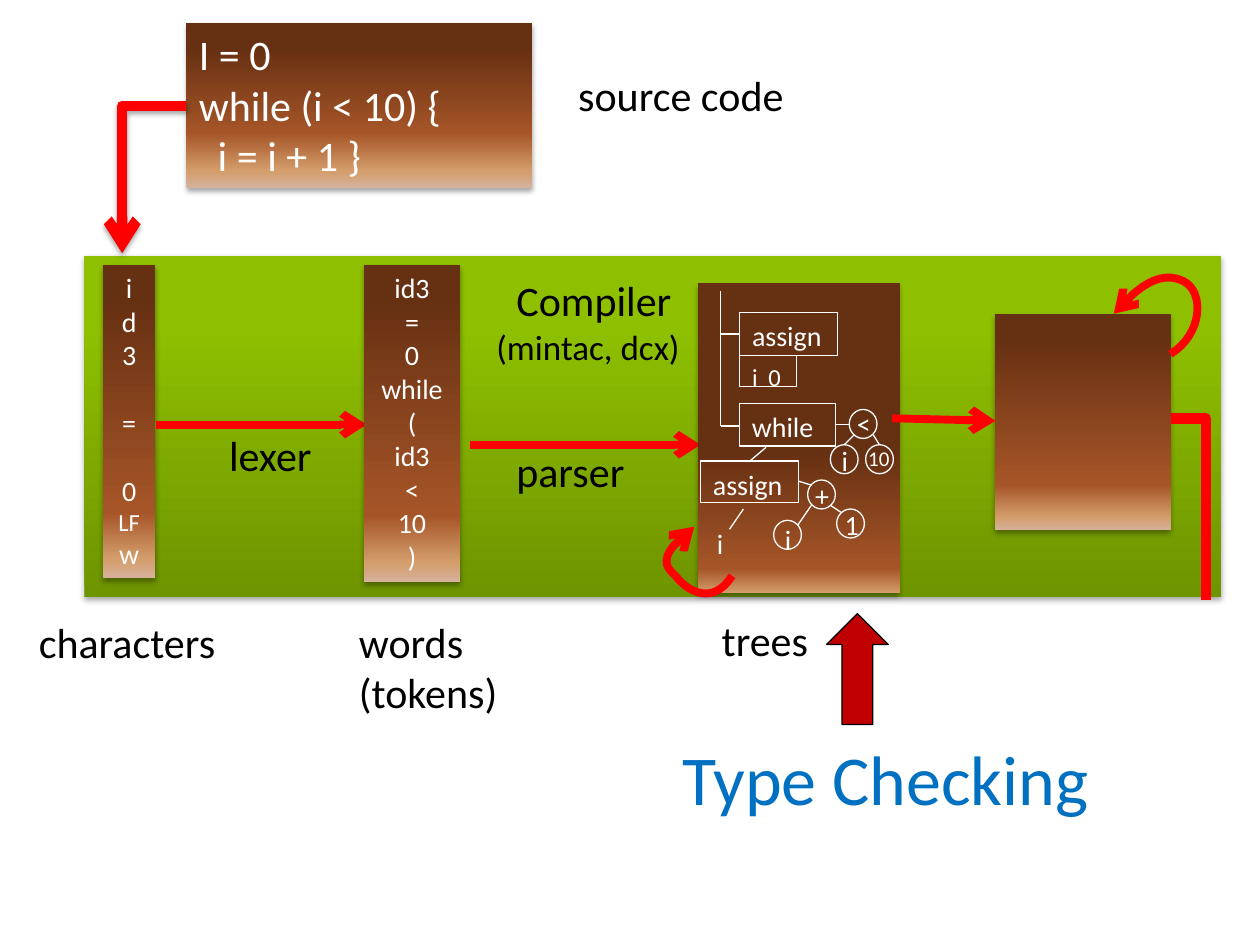
from lxml import etree
from pptx import Presentation
from pptx.dml.color import RGBColor
from pptx.enum.shapes import MSO_CONNECTOR as LINE, MSO_SHAPE as SHAPE
from pptx.enum.text import MSO_ANCHOR as ANCHOR, MSO_AUTO_SIZE as AUTO, PP_ALIGN as ALIGN
from pptx.oxml.ns import qn
from pptx.util import Pt

PX = 9144  # 100 px to the inch
BLACK = RGBColor(0x00, 0x00, 0x00)
WHITE = RGBColor(0xFF, 0xFF, 0xFF)
RED = RGBColor(0xFF, 0x00, 0x00)
DARK_RED = RGBColor(0xC0, 0x00, 0x00)
BLUE = RGBColor(0x00, 0x70, 0xC0)
GREENS = [RGBColor(0x6E, 0x94, 0x00), RGBColor(0x8F, 0xC0, 0x00), RGBColor(0x90, 0xC1, 0x00)]
BROWNS = [RGBColor(0xD6, 0xB1, 0x9C), RGBColor(0xD4, 0x9E, 0x6C),
          RGBColor(0xA6, 0x55, 0x28), RGBColor(0x66, 0x30, 0x12)]
GREEN_STOPS = list(zip([0, 80, 100], GREENS))
SOURCE_STOPS = list(zip([0, 10, 33, 85], BROWNS))
STAGE_STOPS = list(zip([0, 6, 21, 89], BROWNS))
TREE_STOPS = list(zip([0, 0, 8, 46], BROWNS))


def emu(*lengths):
    return [round(length * PX) for length in lengths]


def sub(parent, tag, **attributes):
    return etree.SubElement(parent, qn(tag), {k: str(v) for k, v in attributes.items()})


def add_shadow(shape):
    effects = sub(shape._element.spPr, "a:effectLst")
    shadow = sub(effects, "a:outerShdw", blurRad=Pt(3.1), dist=Pt(1.8),
                 dir=5400000, rotWithShape=0)
    sub(sub(shadow, "a:srgbClr", val=BLACK), "a:alpha", val=35000)


def style_line(line, color, width, arrow=False):
    line.color.rgb = color
    line.width = Pt(width)
    if arrow:
        sub(line._get_or_add_ln(), "a:tailEnd", type="arrow")


def write(shape, lines, size, color=BLACK, align=ALIGN.LEFT, wrap=True, grow=True):
    """Each line is a string, or a (string, options) pair."""
    frame = shape.text_frame
    for name, value in {"word_wrap": wrap, "vertical_anchor": ANCHOR.TOP,
                        "auto_size": AUTO.SHAPE_TO_FIT_TEXT if grow else AUTO.NONE}.items():
        setattr(frame, name, value)
    for index, line in enumerate(lines):
        text, options = (line, {}) if isinstance(line, str) else line
        paragraph = frame.paragraphs[0] if index == 0 else frame.add_paragraph()
        paragraph.alignment = align
        paragraph.space_before = Pt(options.get("before", 0))
        properties = paragraph._p.get_or_add_pPr()
        if "indent" in options:
            properties.set("marL", str(options["indent"] * PX))
        if "tab" in options:
            sub(sub(properties, "a:tabLst"), "a:tab", pos=options["tab"] * PX, algn="l")
        run = paragraph.add_run()
        run.text = text
        font = {"name": "Calibri", "size": Pt(options.get("size", size))}
        for name, value in font.items():
            setattr(run.font, name, value)
        run.font.color.rgb = color


def add_panel(slide, box, stops):
    """Rectangle with an upward gradient and a soft shadow."""
    panel = slide.shapes.add_shape(SHAPE.RECTANGLE, *emu(*box))
    panel.fill.gradient()
    panel.fill.gradient_angle = 90
    stop_list = panel._element.spPr.find(qn("a:gradFill")).find(qn("a:gsLst"))
    stop_list.clear()
    for position, color in stops:
        sub(sub(stop_list, "a:gs", pos=position * 1000), "a:srgbClr", val=color)
    panel.line.fill.background()
    add_shadow(panel)
    return panel


def add_outline(slide, kind, box):
    shape = slide.shapes.add_shape(kind, *emu(*box))
    shape.shadow.inherit = False
    shape.fill.background()
    style_line(shape.line, WHITE, 0.75)
    return shape


def add_label(slide, box, lines, size=24, color=BLACK, align=ALIGN.LEFT):
    label = slide.shapes.add_textbox(*emu(*box))
    write(label, lines, size, color, align, wrap=False)


def add_node(slide, left, top, text, label_box, size=16):
    add_outline(slide, SHAPE.OVAL, (left, top, 22, 23))
    add_label(slide, label_box, [text], size, WHITE, ALIGN.CENTER)


def add_line(slide, ends, color=WHITE, width=0.75, arrow=False):
    line = slide.shapes.add_connector(LINE.STRAIGHT, *emu(*ends))
    style_line(line.line, color, width, arrow)
    sub(line._element.spPr, "a:effectLst")


def add_elbow(slide, ends, arrow=False, rotation=0, shadow=False):
    elbow = slide.shapes.add_connector(LINE.ELBOW, *emu(*ends))
    properties = elbow._element.spPr
    properties.find(qn("a:prstGeom")).set("prst", "bentConnector2")
    if rotation:
        properties.find(qn("a:xfrm")).set("rot", str(rotation * 60000))
    style_line(elbow.line, RED, 6, arrow)
    if shadow:
        add_shadow(elbow)
    else:
        sub(properties, "a:effectLst")


def bezier(p0, p1, p2, p3, steps=16):
    for t in (step / steps for step in range(1, steps + 1)):
        u = 1 - t
        yield tuple(emu(*(u**3 * a + 3 * u * u * t * b + 3 * u * t * t * c + t**3 * d
                          for a, b, c, d in zip(p0, p1, p2, p3))))


def add_loop(slide, points):
    """Curved arrow through cubic segments that share their end points."""
    builder = slide.shapes.build_freeform(*emu(*points[0]))
    for start in range(0, len(points) - 1, 3):
        builder.add_line_segments(list(bezier(*points[start:start + 4])), close=False)
    loop = builder.convert_to_shape()
    loop.shadow.inherit = False
    loop.fill.background()
    style_line(loop.line, RED, 4.5, arrow=True)


def add_tree(slide):
    add_panel(slide, (554, 225, 160, 246), TREE_STOPS)
    for box, line, size in [((587, 248, 78, 34), "assign", 16),
                            ((587, 320, 76, 34), "while", 16),
                            ((587, 282, 45, 25), ("i\t0", {"tab": 13}), 14),
                            ((556, 366, 78, 33), "assign", 16)]:
        write(add_outline(slide, SHAPE.RECTANGLE, box), [line], size, WHITE, grow=False)
    # Branches
    for ends in [(572, 231, 572, 338), (587, 265, 572, 265), (587, 338, 572, 338),
                 (644, 401, 633, 417), (659, 401, 668, 407), (595, 366, 608, 355),
                 (634, 382, 644, 385), (678, 345, 670, 353), (693, 345, 698, 353),
                 (674, 337, 663, 337), (590, 404, 579, 420)]:
        add_line(slide, ends)
    # Operators and operands
    add_node(slide, 641, 381, "+", (637, 375, 31, 37))
    add_node(slide, 614, 413, "i", (613, 410, 25, 37))
    add_node(slide, 664, 404, "1", (660, 398, 32, 37))
    add_node(slide, 674, 325, "<", (670, 318, 31, 37))
    add_node(slide, 659, 353, "i", (658, 347, 25, 37))
    add_node(slide, 687, 353, "10", (679, 349, 37, 30), size=12)
    add_label(slide, (559, 413, 25, 37), ["i"], 16, WHITE, ALIGN.CENTER)


def main():
    presentation = Presentation()
    presentation.slide_width, presentation.slide_height = emu(1000, 750)
    slide = presentation.slides.add_slide(presentation.slide_layouts[6])

    # Compiler and source code
    compiler = add_panel(slide, (67, 203, 902, 271), GREEN_STOPS)
    write(compiler, [("Compiler", {"indent": 333}),
                     ("(mintac, dcx)", {"indent": 317, "size": 20})], 24, grow=False)
    compiler.text_frame.margin_top = 15 * PX
    source = add_panel(slide, (148, 18, 274, 131), SOURCE_STOPS)
    write(source, ["I = 0", "while (i < 10) {", ("i = i + 1 }", {"indent": 15})], 24, WHITE)
    add_elbow(slide, (97, 201, 148, 84), arrow=True, rotation=180, shadow=True)

    # Characters, tokens, trees and output
    characters = add_panel(slide, (82, 210, 41, 249), STAGE_STOPS)
    gap = {"before": 19.5}
    write(characters, ["i", "d3", ("=", gap), ("0", gap), ("LF", {"size": 14}), "w"],
          16, WHITE, ALIGN.CENTER)
    add_line(slide, (124, 337, 291, 337), RED, 4.5, arrow=True)
    tokens = add_panel(slide, (289, 210, 76, 252), STAGE_STOPS)
    write(tokens, "id3 = 0 while ( id3 < 10 )".split(), 16, WHITE, ALIGN.CENTER)
    add_line(slide, (373, 353, 556, 353), RED, 4.5, arrow=True)
    add_tree(slide)
    add_panel(slide, (790, 249, 139, 172), STAGE_STOPS)
    add_line(slide, (708, 332, 790, 334), RED, 4.5, arrow=True)
    add_elbow(slide, (929, 332, 957, 476))

    # Passes that repeat on one stage
    add_loop(slide, [(929, 281), (955, 265), (956, 231), (939, 223),
                     (922, 215), (905, 225), (884, 249)])
    add_loop(slide, [(581, 457), (564, 484), (542, 465), (537, 458),
                     (532, 452), (516, 445), (551, 418)])

    # Labels
    for box, lines in [((449, 50, 185, 50), ["source code"]),
                       ((172, 336, 86, 50), ["lexer"]),
                       ((400, 349, 107, 50), ["parser"]),
                       ((21, 484, 162, 50), ["characters"]),
                       ((275, 484, 131, 91), ["words", "(tokens)"]),
                       ((563, 483, 90, 50), ["trees"])]:
        add_label(slide, box, lines)

    # Type checking
    pointer = slide.shapes.add_shape(SHAPE.UP_ARROW, *emu(656, 487, 49, 88))
    pointer.shadow.inherit = False
    pointer.fill.solid()
    pointer.fill.fore_color.rgb = DARK_RED
    style_line(pointer.line, BLACK, 0.75)
    add_label(slide, (532, 579, 348, 77), ["Type Checking"], 40, BLUE)

    presentation.save("out.pptx")


if __name__ == "__main__":
    main()
